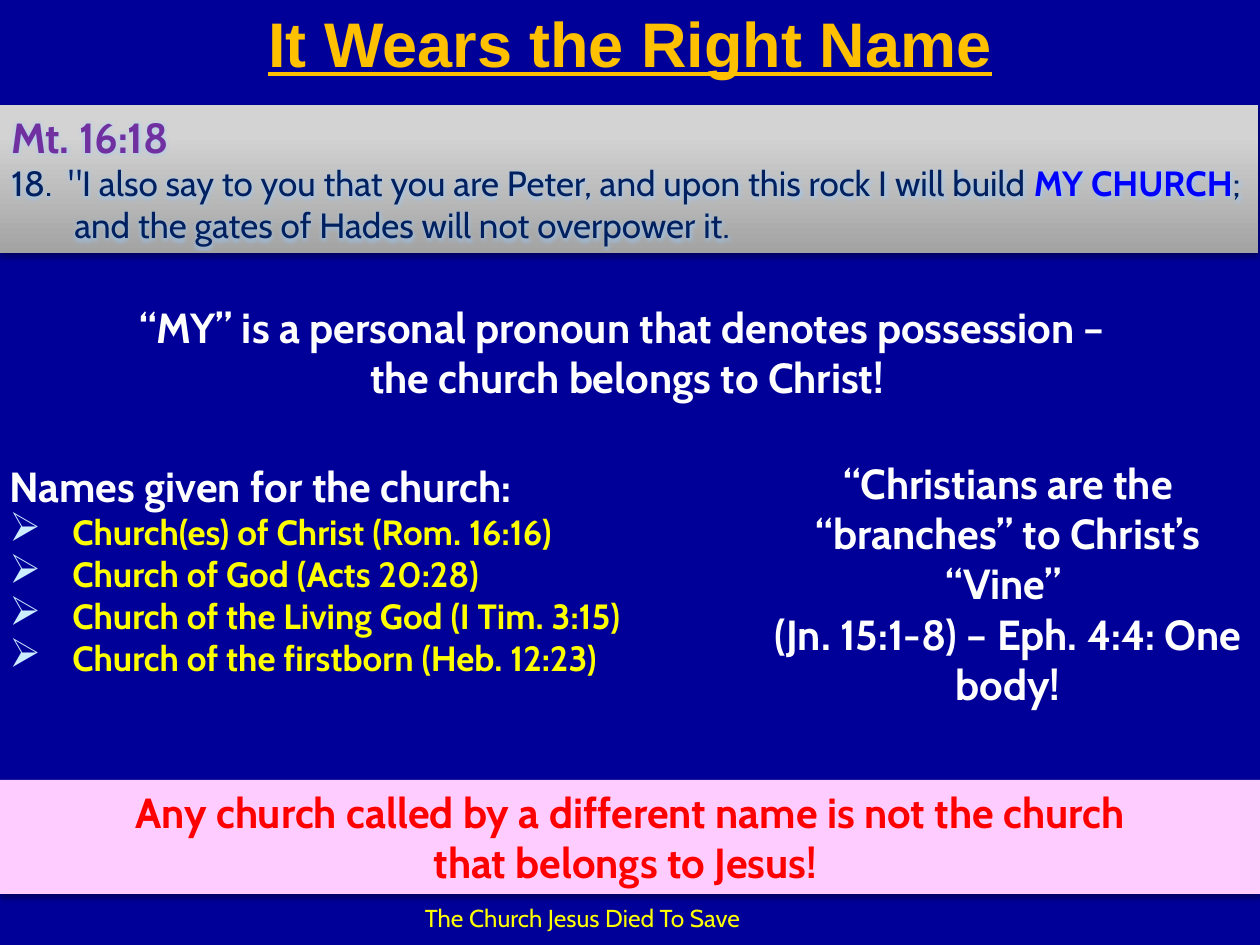
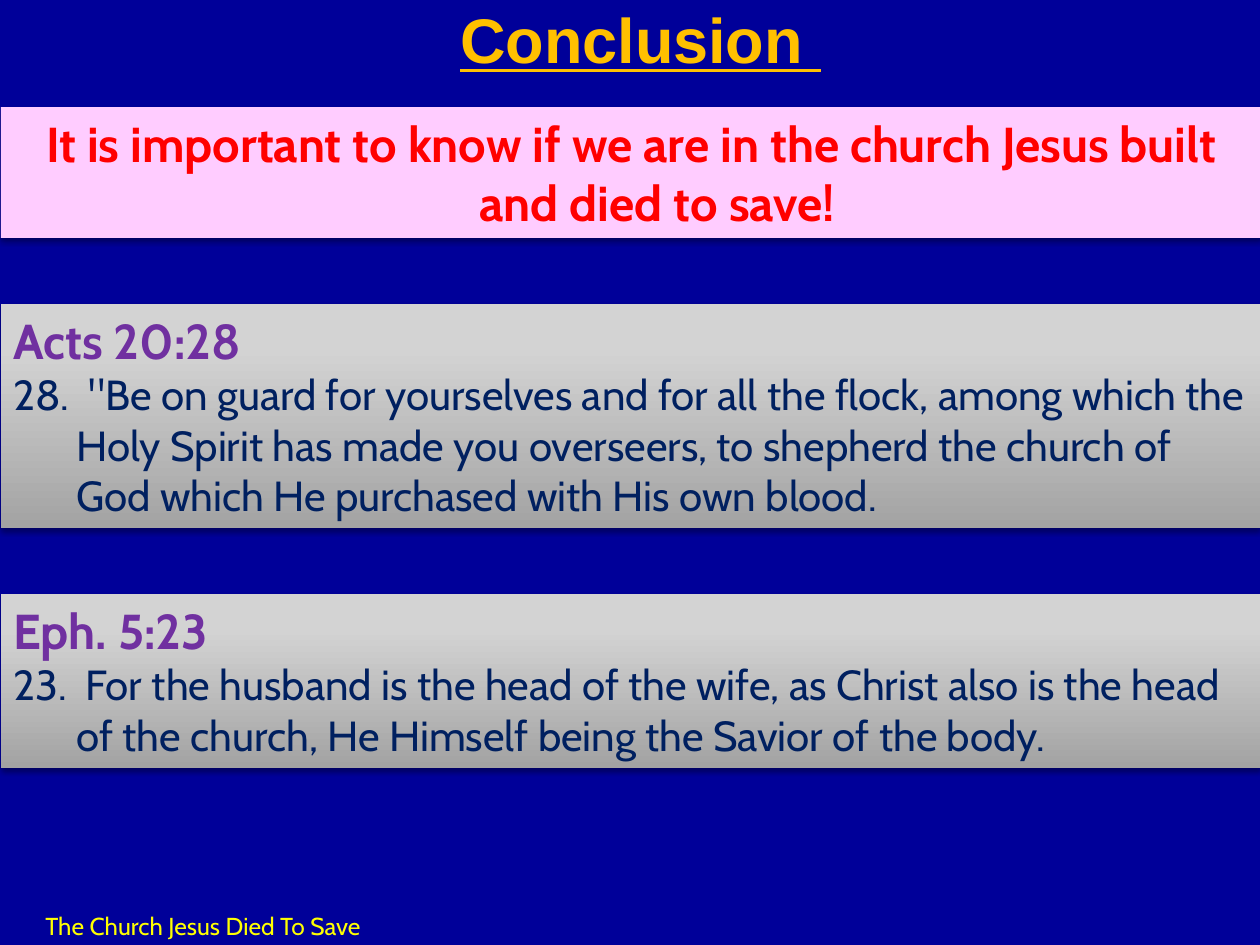
import pptx
import pptx.util
import pptx.dml.color
import pptx.enum.shapes
import pptx.enum.text
import pptx.oxml
import pptx.oxml.ns
from lxml import etree

RGB = pptx.dml.color.RGBColor
NAVY, GOLD, YELLOW = RGB(0, 0, 0x99), RGB(0xFF, 0xC0, 0), RGB(0xFF, 0xFF, 0)
WHITE, RED, PINK = RGB(0xFF, 0xFF, 0xFF), RGB(0xFF, 0, 0), RGB(0xFF, 0xCC, 0xFF)
PURPLE, INK, BLUE = RGB(0x70, 0x30, 0xA0), RGB(0, 0x20, 0x60), RGB(0, 0, 0xFF)
BULLET, GLOW, BLACK = RGB(0xCC, 0xEC, 0xFF), RGB(0x99, 0xCC, 0xFF), RGB(0, 0, 0)
SILVER = [(0, RGB(0xA3, 0xA3, 0xA3)), (80, RGB(0xD3, 0xD3, 0xD3)), (100, RGB(0xD4, 0xD4, 0xD4))]

W, H, HANG = 1260, 945, 63
FOOTER = "The Church Jesus Died To Save"

# Boxes are left, top, width, height in px. A paragraph is a string or a list of
# runs; a run is a string or a (string, format) pair.
SLIDES = [
    dict(
        title=("It Wears the Right Name", (0, 0, W, 84)),
        footer=(283, 897, 599, 48),
        verses=[dict(
            box=(-1, 105, 1259, 148), size=20, glow=GLOW, ref="Mt. 16:18",
            text=['18.  "I also say to you that you are Peter, and upon this rock I will build ',
                  ("MY CHURCH", dict(color=BLUE, bold=True)),
                  "; and the gates of Hades will not overpower it."])],
        points=[
            ((-3, 295, W, 115), ["“MY” is a personal pronoun that denotes possession – ",
                                 "the church belongs to Christ!"]),
            ((761, 451, 494, 267), ["“Christians are the “branches” to Christ’s “Vine” ",
                                    "(Jn. 15:1-8) – Eph. 4:4: One body!"])],
        names=dict(
            box=(-3, 454, W, 233), head="Names given for the church:",
            items=["Church(es) of Christ (Rom. 16:16)", "Church of God (Acts 20:28)",
                   "Church of the Living God (I Tim. 3:15)",
                   "Church of the firstborn (Heb. 12:23)"]),
        banner=((0, 780, W, 114), 24, ["Any church called by a different name is not the church",
                                       "that belongs to Jesus! "])),
    dict(
        title=("Conclusion ", (21, 0, 1239, 77)),
        footer=(-3, 905, 412, 41),
        verses=[
            dict(box=(1, 304, 1259, 224), size=24, ref="Acts 20:28",
                 text='28.  "Be on guard for yourselves and for all the flock, among which the '
                      'Holy Spirit has made you overseers, to shepherd the church of God which '
                      'He purchased with His own blood.'),
            dict(box=(1, 594, 1259, 174), size=24, ref="Eph. 5:23",
                 text="23.  For the husband is the head of the wife, as Christ also is the head "
                      "of the church, He Himself being the Savior of the body.")],
        banner=((1, 107, W, 131), 28, ["It is important to know if we are in the church "
                                       "Jesus built and died to save! "])),
]


def px(n):
    return round(n * 914400 / 126)


def add_xml(parent, tag, **attrs):
    el = etree.SubElement(parent, pptx.oxml.ns.qn("a:" + tag))
    for key, value in attrs.items():
        el.set(key, str(value))
    return el


def write(tf, text, size, color, font="Cabin", bold=False, underline=False,
          center=False, hang=False, bullet=False, glow=None):
    """Add one paragraph, filling the empty first one if there is one."""
    p = tf.paragraphs[0] if not tf.paragraphs[0].runs else tf.add_paragraph()
    align = pptx.enum.text.PP_ALIGN
    p.alignment = align.CENTER if center else align.LEFT
    ppr = p._p.get_or_add_pPr()
    if hang:
        ppr.set("marL", str(px(HANG)))
        ppr.set("indent", str(-px(HANG)))
    if bullet:
        add_xml(add_xml(ppr, "buClr"), "srgbClr", val=BULLET)
        add_xml(ppr, "buSzPct", val=115000)
        add_xml(ppr, "buChar", char="➢")
    for run in [text] if isinstance(text, str) else text:
        words, own = (run, {}) if isinstance(run, str) else run
        r = p.add_run()
        r.text = words
        r.font.size = pptx.util.Pt(size)
        r.font.bold = own.get("bold", bold)
        r.font.underline = underline
        r.font.color.rgb = own.get("color", color)
        if glow:
            halo = add_xml(add_xml(r._r.get_or_add_rPr(), "effectLst"), "glow", rad=63500)
            add_xml(add_xml(halo, "srgbClr", val=glow), "alpha", val=60000)
        r.font.name = font


def text_box(s, box, middle=False):
    tf = s.shapes.add_textbox(*map(px, box)).text_frame
    tf.word_wrap = True
    if middle:
        tf.vertical_anchor = pptx.enum.text.MSO_ANCHOR.MIDDLE
    return tf


def band(s, box, color=None):
    """Add a shadowed band, silver gradient unless a colour is given."""
    sp = s.shapes.add_shape(pptx.enum.shapes.MSO_SHAPE.RECTANGLE, *map(px, box))
    props = sp._element.spPr
    if color is not None:
        sp.fill.solid()
        sp.fill.fore_color.rgb = color
    else:
        grad = add_xml(props, "gradFill", rotWithShape=1)
        stops = add_xml(grad, "gsLst")
        for pos, shade in SILVER:
            add_xml(add_xml(stops, "gs", pos=pos * 1000), "srgbClr", val=shade)
        add_xml(grad, "lin", ang=270 * 60000, scaled=0)
    sp.line.fill.background()
    sp.shadow.inherit = False
    effects = props.find(pptx.oxml.ns.qn("a:effectLst"))
    shadow = add_xml(effects, "outerShdw", blurRad=pptx.util.Pt(3.1), dist=pptx.util.Pt(1.8),
                     dir=90 * 60000, rotWithShape=0)
    add_xml(add_xml(shadow, "srgbClr", val=BLACK), "alpha", val=35000)
    tf = sp.text_frame
    tf.word_wrap = True
    tf.vertical_anchor = pptx.enum.text.MSO_ANCHOR.TOP
    return tf


def build(prs, data):
    s = prs.slides.add_slide(prs.slide_layouts[6])
    s.background.fill.solid()
    s.background.fill.fore_color.rgb = NAVY

    title, box = data["title"]
    write(text_box(s, box, middle=True), title, 36, GOLD, font="Arial",
          bold=True, underline=True, center=True)
    write(text_box(s, data["footer"]), FOOTER, 14, YELLOW, center=True)

    for verse in data["verses"]:
        tf, glow = band(s, verse["box"]), verse.get("glow")
        write(tf, verse["ref"], verse["size"] + 4, PURPLE, bold=True, hang=True, glow=glow)
        write(tf, verse["text"], verse["size"], INK, hang=True, glow=glow)

    for box, lines in data.get("points", []):
        tf = text_box(s, box)
        for line in lines:
            write(tf, line, 24, WHITE, bold=True, center=True)

    if "names" in data:
        names = data["names"]
        tf = text_box(s, names["box"])
        write(tf, names["head"], 24, WHITE, bold=True)
        for item in names["items"]:
            write(tf, item, 20, YELLOW, bold=True, hang=True, bullet=True)

    box, size, lines = data["banner"]
    tf = band(s, box, PINK)
    for line in lines:
        write(tf, line, size, RED, bold=True, center=True, hang=True)


def main():
    prs = pptx.Presentation()
    prs.slide_width, prs.slide_height = px(W), px(H)
    for data in SLIDES:
        build(prs, data)
    prs.save("out.pptx")


if __name__ == "__main__":
    main()
